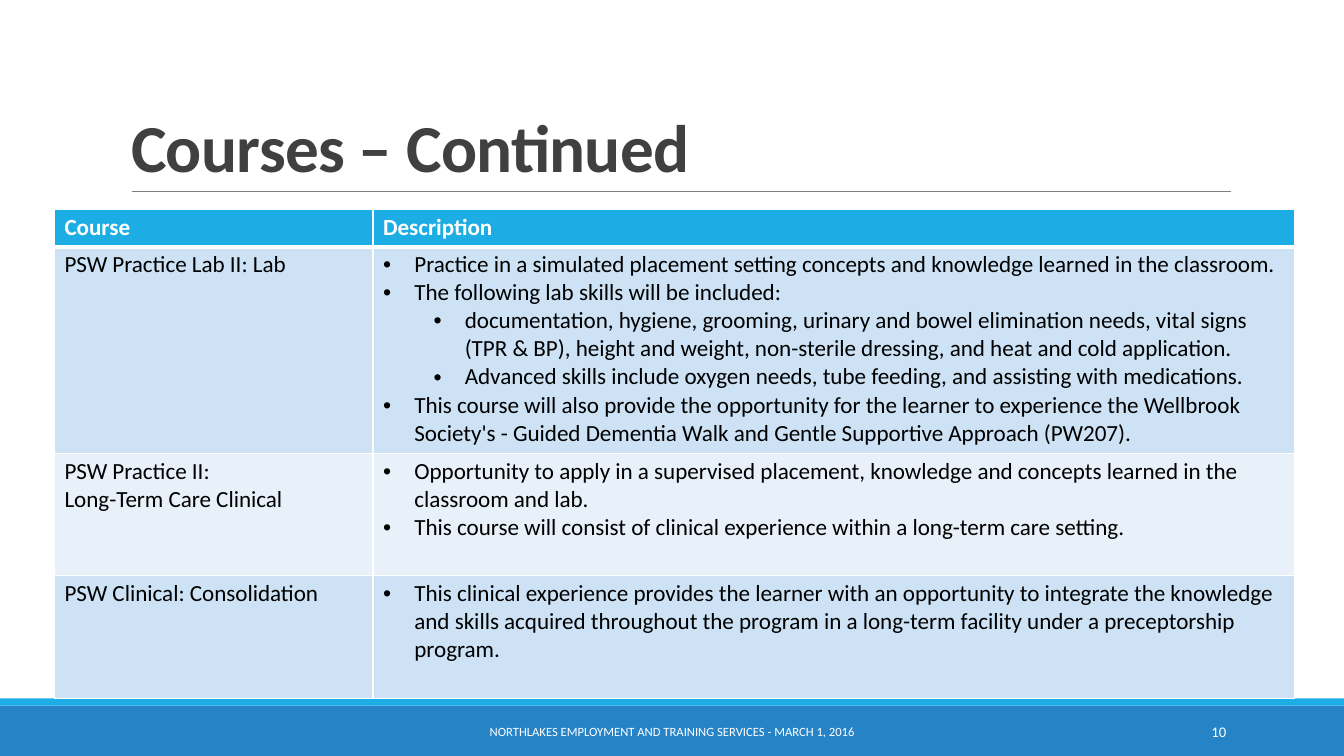
import pptx
import pptx.util
import pptx.dml.color
import pptx.enum.text
import pptx.enum.shapes
import lxml.etree

Inches = pptx.util.Inches
Pt = pptx.util.Pt
ALIGN = pptx.enum.text.PP_ALIGN
ANCHOR = pptx.enum.text.MSO_ANCHOR
NS = "{http://schemas.openxmlformats.org/drawingml/2006/main}"

TITLE = "Courses – Continued"
HEAD = ["Course", "Description"]
COURSES = [
    (["PSW Practice Lab II: Lab"], [
        (0, "Practice in a simulated placement setting concepts and knowledge learned in the classroom."),
        (0, "The following lab skills will be included:"),
        (1, "documentation, hygiene, grooming, urinary and bowel elimination needs, vital signs "
            "(TPR & BP), height and weight, non-sterile dressing, and heat and cold application."),
        (1, "Advanced skills include oxygen needs, tube feeding, and assisting with medications."),
        (0, "This course will also provide the opportunity for the learner to experience the Wellbrook "
            "Society's - Guided Dementia Walk and Gentle Supportive Approach (PW207)."),
    ]),
    (["PSW Practice II:", "Long-Term Care Clinical"], [
        (0, "Opportunity to apply in a supervised placement, knowledge and concepts learned in the "
            "classroom and lab."),
        (0, "This course will consist of clinical experience within a long-term care setting."),
    ]),
    (["PSW Clinical: Consolidation"], [
        (0, "This clinical experience provides the learner with an opportunity to integrate the "
            "knowledge and skills acquired throughout the program in a long-term facility under a "
            "preceptorship program."),
    ]),
]
BARS = [(7, 0.5, "2683C6"), (6.93, 0.07, "1CADE4")]
NOTES = [
    ("NORTHLAKES EMPLOYMENT AND TRAINING SERVICES - MARCH 1, 2016", 4.03, 5.27, ALIGN.CENTER, 9),
    ("10", 10.83, 1.43, ALIGN.RIGHT, 10.5),
]
COLS = [3.16, 9.14]
ROWS = [0.37, 2.05, 1.21, 1.22]
FILLS = ["1CADE4", "CDE3F5", "E8F1FA", "CDE3F5"]
INSET = {"margin_left": Inches(0.1), "margin_right": Inches(0.1),
         "margin_top": Inches(0.04), "margin_bottom": Inches(0.04)}


def color(hexa):
    return pptx.dml.color.RGBColor.from_string(hexa)


def apply(item, form):
    for name, value in form.items():
        setattr(item, name, value)


def paint(item, hexa):
    item.fill.solid()
    item.fill.fore_color.rgb = color(hexa)


def write(para, text, size, hexa, bold=False):
    run = para.add_run()
    run.text = text
    apply(run.font, {"name": "Calibri", "size": Pt(size), "bold": bold})
    run.font.color.rgb = color(hexa)
    return run


def bullet(para, level):
    para.level = level
    props = para._p.get_or_add_pPr()
    props.set("marL", str(Inches(0.31 + 0.5 * level)))
    props.set("indent", str(-Inches(0.31)))
    lxml.etree.SubElement(props, NS + "buFont", typeface="Arial")
    lxml.etree.SubElement(props, NS + "buChar", char="•")


def border(cell, row):
    props = cell._tc.get_or_add_tcPr()
    for side in "LRTB":
        thick = (row, side) in [(0, "B"), (1, "T")]
        line = lxml.etree.SubElement(props, NS + "ln" + side, w=str(Pt(3 if thick else 1)))
        solid = lxml.etree.SubElement(line, NS + "solidFill")
        lxml.etree.SubElement(solid, NS + "srgbClr", val="FFFFFF")


def add_bars(slide):
    for top, high, hexa in BARS:
        bar = slide.shapes.add_shape(pptx.enum.shapes.MSO_SHAPE.RECTANGLE,
                                     0, Inches(top), Inches(13.33), Inches(high))
        bar.shadow.inherit = False
        paint(bar, hexa)
        bar.line.fill.background()


def add_rule(slide):
    rule = slide.shapes.add_connector(pptx.enum.shapes.MSO_CONNECTOR.STRAIGHT,
                                      Inches(1.31), Inches(1.9), Inches(12.21), Inches(1.9))
    rule.line.width = Pt(0.5)
    rule.line.color.rgb = color("808080")
    lxml.etree.SubElement(rule._element.spPr, NS + "effectLst")


def add_title(slide):
    title = slide.shapes.title
    apply(title, {"left": Inches(1.2), "top": Inches(0.31),
                  "width": Inches(11), "height": Inches(1.59)})
    apply(title.text_frame, {"vertical_anchor": ANCHOR.BOTTOM, "word_wrap": True})
    para = title.text_frame.paragraphs[0]
    apply(para, {"alignment": ALIGN.LEFT, "line_spacing": 0.85})
    run = write(para, TITLE, 48, "404040", True)
    run._r.get_or_add_rPr().set("spc", "-50")


def add_grid(slide):
    table = slide.shapes.add_table(len(ROWS), len(COLS), Inches(0.54), Inches(2.08),
                                   Inches(sum(COLS)), Inches(sum(ROWS))).table
    for col, wide in zip(table.columns, COLS):
        col.width = Inches(wide)
    for row, high in zip(table.rows, ROWS):
        row.height = Inches(high)
    plain = [[[(None, text)] for text in HEAD]]
    plain += [[[(None, text) for text in names], points] for names, points in COURSES]
    for r, row in enumerate(plain):
        for c, lines in enumerate(row):
            cell = table.cell(r, c)
            apply(cell, INSET)
            border(cell, r)
            paint(cell, FILLS[r])
            frame = cell.text_frame
            for i, (level, text) in enumerate(lines):
                para = frame.add_paragraph() if i else frame.paragraphs[0]
                if level is not None:
                    bullet(para, level)
                write(para, text, 16.5, "000000" if r else "FFFFFF", r == 0)


def add_notes(slide):
    for text, left, wide, align, size in NOTES:
        box = slide.shapes.add_textbox(Inches(left), Inches(7.06), Inches(wide), Inches(0.4))
        apply(box.text_frame, {"word_wrap": True, "vertical_anchor": ANCHOR.MIDDLE})
        para = box.text_frame.paragraphs[0]
        para.alignment = align
        write(para, text, size, "FFFFFF")


def main():
    deck = pptx.Presentation()
    apply(deck, {"slide_width": Inches(13.33), "slide_height": Inches(7.5)})
    slide = deck.slides.add_slide(deck.slide_layouts[5])
    add_bars(slide)
    add_rule(slide)
    add_grid(slide)
    add_title(slide)
    add_notes(slide)
    deck.save("out.pptx")


if __name__ == "__main__":
    main()
